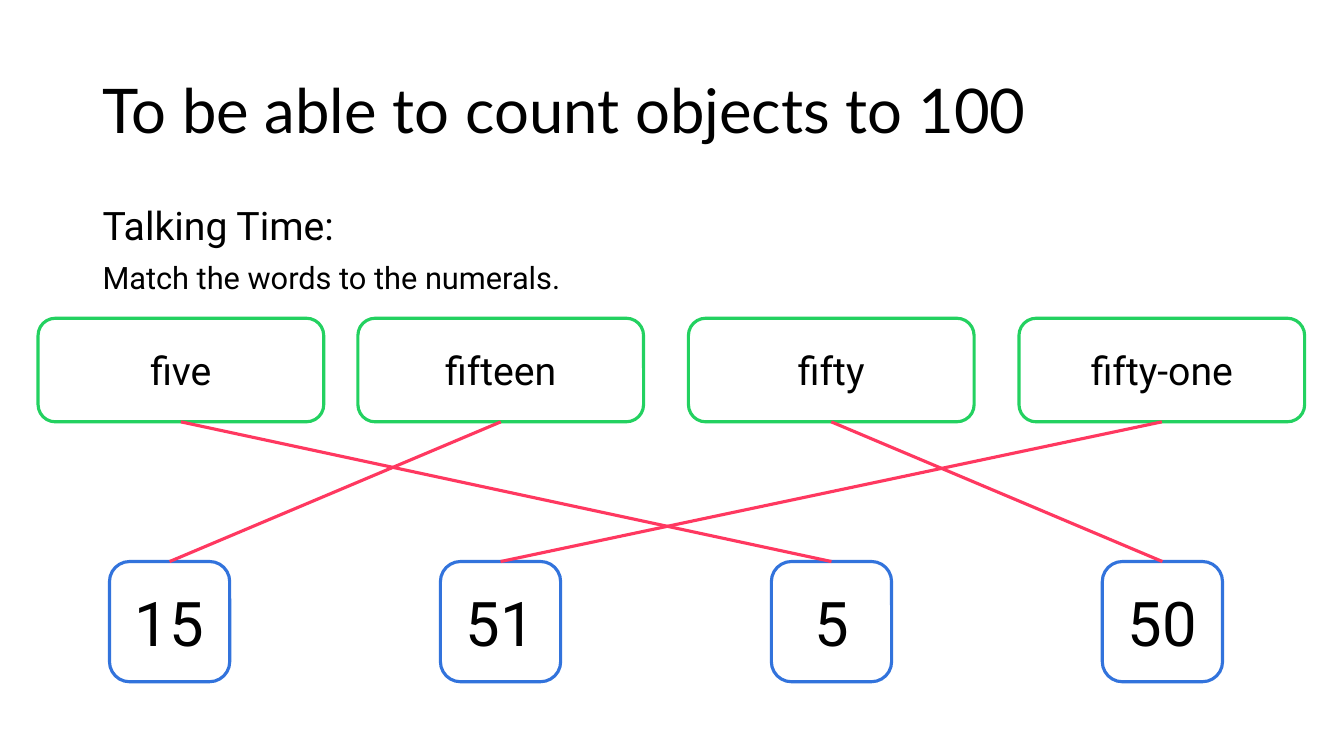
"""Build a slide that matches number words to numerals."""
from lxml.etree import SubElement
from pptx import Presentation
from pptx.dml.color import RGBColor
from pptx.enum.shapes import MSO_CONNECTOR, MSO_SHAPE
from pptx.enum.text import MSO_ANCHOR, MSO_AUTO_SIZE, PP_ALIGN
from pptx.oxml.ns import qn
from pptx.util import Cm, Pt

BLACK = RGBColor(0x00, 0x00, 0x00)
WHITE = RGBColor(0xFF, 0xFF, 0xFF)
GREEN = RGBColor(0x23, 0xD1, 0x60)
BLUE = RGBColor(0x32, 0x73, 0xDC)
RED = RGBColor(0xFF, 0x38, 0x60)

WORD_LEFTS = {"five": 0.96, "fifteen": 9.02, "fifty": 17.35, "fifty-one": 25.68}
NUMERALS = ["15", "51", "5", "50"]
MATCHES = {"five": "5", "fifteen": "15", "fifty": "50", "fifty-one": "51"}


def style_paragraph(paragraph, size, font_name, alignment):
    paragraph.alignment = alignment
    paragraph.font.size = Pt(size)
    paragraph.font.name = font_name
    paragraph.font.color.rgb = BLACK


def add_card(text, left, top, width, height, size, outline):
    shape = slide.shapes.add_shape(
        MSO_SHAPE.ROUNDED_RECTANGLE, Cm(left), Cm(top), Cm(width), Cm(height))
    shape.shadow.inherit = False
    shape.fill.solid()
    shape.fill.fore_color.rgb = WHITE
    shape.line.color.rgb = outline
    shape.line.width = Pt(2.25)
    shape.text_frame.text = text
    shape.text_frame.vertical_anchor = MSO_ANCHOR.MIDDLE
    style_paragraph(shape.text_frame.paragraphs[0], size, "Roboto", PP_ALIGN.CENTER)
    return shape


presentation = Presentation()
presentation.slide_width = Cm(33.87)
presentation.slide_height = Cm(19.05)
slide = presentation.slides.add_slide(presentation.slide_layouts[1])
slide.background.fill.solid()
slide.background.fill.fore_color.rgb = WHITE

title = slide.shapes.title
title.left, title.top, title.width, title.height = Cm(2.33), Cm(1.01), Cm(24.38), Cm(3.68)
title.text_frame.text = "To be able to count objects to 100"
title.text_frame.auto_size = MSO_AUTO_SIZE.NONE
title.text_frame.vertical_anchor = MSO_ANCHOR.MIDDLE
style_paragraph(title.text_frame.paragraphs[0], 44, "Lato", PP_ALIGN.LEFT)
title.text_frame.paragraphs[0].line_spacing = 0.9

body = slide.placeholders[1]
body.left, body.top, body.width, body.height = Cm(2.33), Cm(5.07), Cm(29.21), Cm(12.09)
body.text_frame.text = "Talking Time:\nMatch the words to the numerals."
body.text_frame.auto_size = MSO_AUTO_SIZE.NONE
for paragraph, size, space_before in zip(body.text_frame.paragraphs, (28, 22), (0, 10)):
    properties = paragraph._p.get_or_add_pPr()
    properties.set("marL", "0")
    properties.set("indent", "0")
    SubElement(properties, qn("a:buNone"))
    style_paragraph(paragraph, size, "Roboto", PP_ALIGN.LEFT)
    paragraph.line_spacing = 0.9
    paragraph.space_before = Pt(space_before)

numeral_cards = {
    numeral: add_card(numeral, 2.76 + 8.34 * column, 14.15, 3.03, 3.03, 44, BLUE)
    for column, numeral in enumerate(NUMERALS)
}
word_cards = {
    word: add_card(word, left, 8.02, 7.2, 2.61, 28, GREEN)
    for word, left in WORD_LEFTS.items()
}

for word, numeral in MATCHES.items():
    connector = slide.shapes.add_connector(MSO_CONNECTOR.STRAIGHT, 0, 0, 0, 0)
    connector.begin_connect(word_cards[word], 2)
    connector.end_connect(numeral_cards[numeral], 0)
    connector.line.color.rgb = RED
    connector.line.width = Pt(2.25)
    SubElement(connector._element.spPr, qn("a:effectLst"))

presentation.save("out.pptx")
